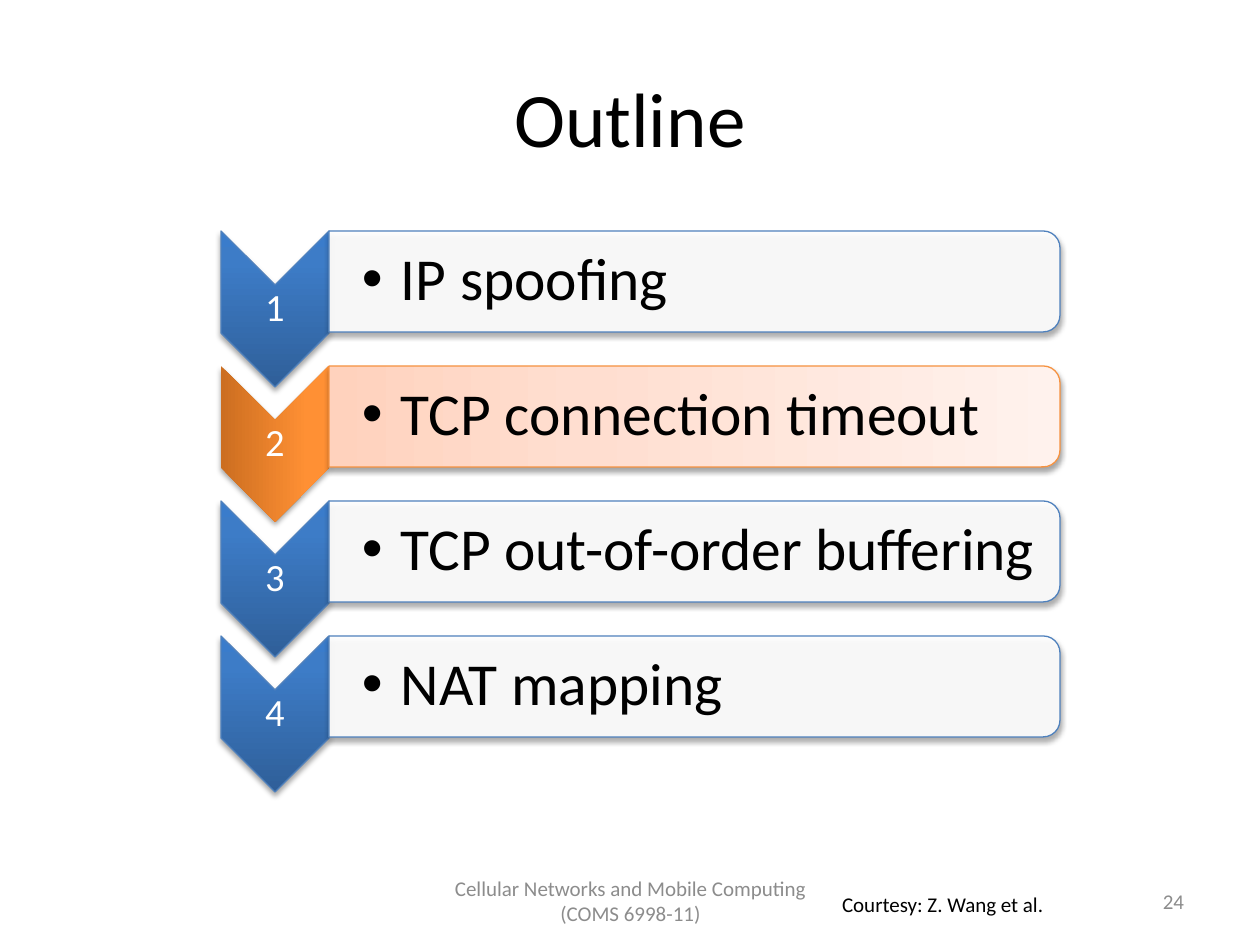
from pptx import Presentation
from pptx.dml.color import RGBColor
from pptx.enum.shapes import MSO_SHAPE
from pptx.enum.text import MSO_ANCHOR, MSO_AUTO_SIZE, PP_ALIGN
from pptx.oxml.ns import qn
from pptx.util import Emu, Pt
from lxml import etree

CHEVRON, ROUNDED_BAR = MSO_SHAPE.CHEVRON, MSO_SHAPE.ROUND_2_SAME_RECTANGLE
LEFT, CENTER, RIGHT = PP_ALIGN.LEFT, PP_ALIGN.CENTER, PP_ALIGN.RIGHT
TOP, MIDDLE = MSO_ANCHOR.TOP, MSO_ANCHOR.MIDDLE
FIT_SHAPE = MSO_AUTO_SIZE.SHAPE_TO_FIT_TEXT

BLACK = RGBColor(0x00, 0x00, 0x00)
WHITE = RGBColor(0xFF, 0xFF, 0xFF)
GRAY = RGBColor(0x8C, 0x8C, 0x8C)
BLUE_LINE = RGBColor(0x4F, 0x81, 0xBD)
ORANGE_LINE = RGBColor(0xF6, 0x92, 0x40)
BLUE_STOPS = (
    (0, RGBColor(0x2F, 0x5F, 0x99)),
    (80, RGBColor(0x3D, 0x7C, 0xC7)),
    (100, RGBColor(0x3A, 0x7C, 0xCB)),
)
ORANGE_STOPS = (
    (0, RGBColor(0xCC, 0x6E, 0x20)),
    (80, RGBColor(0xFF, 0x90, 0x34)),
    (100, RGBColor(0xFF, 0x91, 0x36)),
)
PEACH_STOPS = (
    (0, RGBColor(0xFF, 0xD2, 0xBD)),
    (35, RGBColor(0xFF, 0xDE, 0xD0)),
    (100, RGBColor(0xFF, 0xF2, 0xED)),
)

TOPICS = ("IP spoofing", "TCP connection timeout", "TCP out-of-order buffering", "NAT mapping")
CURRENT_TOPIC = 1
FIRST_ROW, ROW_STEP = 231, 135


def px(length):
    """Turn pixels at 126 to the inch into EMU."""
    return Emu(round(length * 914400 / 126))


def add_color(parent, color, alpha=None):
    """Append an RGB colour, with optional opacity in percent."""
    node = etree.SubElement(parent, qn("a:srgbClr"), val=str(color))
    if alpha is not None:
        etree.SubElement(node, qn("a:alpha"), val=str(alpha * 1000))


class OutlineSlide:
    """Hold the text style and the slide that elements are added to."""

    def __init__(self, slide, font="Calibri"):
        """Keep the slide and its font."""
        self.slide = slide
        self.font = font

    def text(self, text, box, size, color=BLACK, align=CENTER, anchor=MIDDLE,
             insets=(13, 6, 13, 6), wrap=True, spacing=None, bullet_indent=None):
        """Add a one-paragraph text box, bulleted if an indent is given."""
        text_box = self.slide.shapes.add_textbox(*map(px, box))
        frame = text_box.text_frame
        frame.word_wrap = wrap
        frame.vertical_anchor = anchor
        if not wrap:
            frame.auto_size = FIT_SHAPE
        (frame.margin_left, frame.margin_top,
         frame.margin_right, frame.margin_bottom) = map(px, insets)
        paragraph = frame.paragraphs[0]
        paragraph.alignment = align
        if spacing:
            paragraph.line_spacing = spacing
        if bullet_indent:
            properties = paragraph._p.get_or_add_pPr()
            properties.set("marL", str(px(bullet_indent)))
            properties.set("indent", str(-px(bullet_indent)))
            etree.SubElement(properties, qn("a:buFont"), typeface="Arial")
            etree.SubElement(properties, qn("a:buChar"), char="•")
        run = paragraph.add_run()
        run.text = text
        run.font.name = self.font
        run.font.size = Pt(size)
        run.font.color.rgb = color

    def upright(self, kind, box, line=None, stops=None, turn_gradient=True):
        """Add a preset turned by 90 degrees so that it covers the given box."""
        left, top, width, height = box
        shift = (width - height) / 2
        shape = self.slide.shapes.add_shape(
            kind, px(left + shift), px(top - shift), px(height), px(width))
        shape.rotation = 90
        properties = shape.element.spPr
        if stops:
            shape.fill.gradient()
            shape.fill.gradient_angle = 90
            gradient = properties.find(qn("a:gradFill"))
            gradient.set("rotWithShape", str(int(turn_gradient)))
            stop_list = gradient.find(qn("a:gsLst"))
            stop_list.clear()
            for position, color in stops:
                add_color(etree.SubElement(stop_list, qn("a:gs"), pos=str(position * 1000)), color)
        else:
            shape.fill.solid()
            shape.fill.fore_color.rgb = WHITE
            fill_color = properties.find(qn("a:solidFill"))[0]
            etree.SubElement(fill_color, qn("a:alpha"), val="90000")
        if line:
            shape.line.color.rgb = line
            shape.line.width = Pt(0.75)
        else:
            shape.line.fill.background()
        shape.shadow.inherit = False
        shadow = etree.SubElement(
            properties.find(qn("a:effectLst")), qn("a:outerShdw"),
            blurRad=str(Pt(3.1)), dist=str(Pt(1.8)), dir="5400000", rotWithShape="0")
        add_color(shadow, BLACK, 35)

    def topic(self, number, title, top, current):
        """Add one outline row: numbered chevron and bulleted bar."""
        chevron_box, bar_box = (221, top, 108, 156), (329, top, 731, 101)
        if current:
            self.upright(CHEVRON, chevron_box, stops=ORANGE_STOPS)
        else:
            self.upright(CHEVRON, chevron_box, BLUE_LINE, BLUE_STOPS, turn_gradient=False)
        self.text(str(number), (221, top + 55, 108, 47), 22, WHITE,
                  insets=(3, 3, 3, 3), spacing=0.9)
        if current:
            self.upright(ROUNDED_BAR, bar_box, ORANGE_LINE, PEACH_STOPS)
        else:
            self.upright(ROUNDED_BAR, bar_box, BLUE_LINE)
        self.text(title, (329, top + 5, 726, 91), 34, align=LEFT,
                  insets=(33, 3, 3, 3), spacing=0.9, bullet_indent=39)


def main():
    """Build the outline slide and save it."""
    presentation = Presentation()
    presentation.slide_width, presentation.slide_height = px(1260), px(945)
    outline = OutlineSlide(presentation.slides.add_slide(presentation.slide_layouts[6]))

    outline.text("Outline", (63, 38, 1134, 158), 44)
    for index, title in enumerate(TOPICS):
        outline.topic(index + 1, title, FIRST_ROW + index * ROW_STEP, index == CURRENT_TOPIC)
    outline.text("Cellular Networks and Mobile Computing (COMS 6998-11)",
                 (431, 876, 399, 50), 12, GRAY)
    outline.text("Courtesy: Z. Wang et al.", (829, 886, 231, 38), 12,
                 align=LEFT, anchor=TOP, wrap=False)
    outline.text("24", (903, 876, 294, 50), 12, GRAY, RIGHT)

    presentation.save("out.pptx")


if __name__ == "__main__":
    main()
